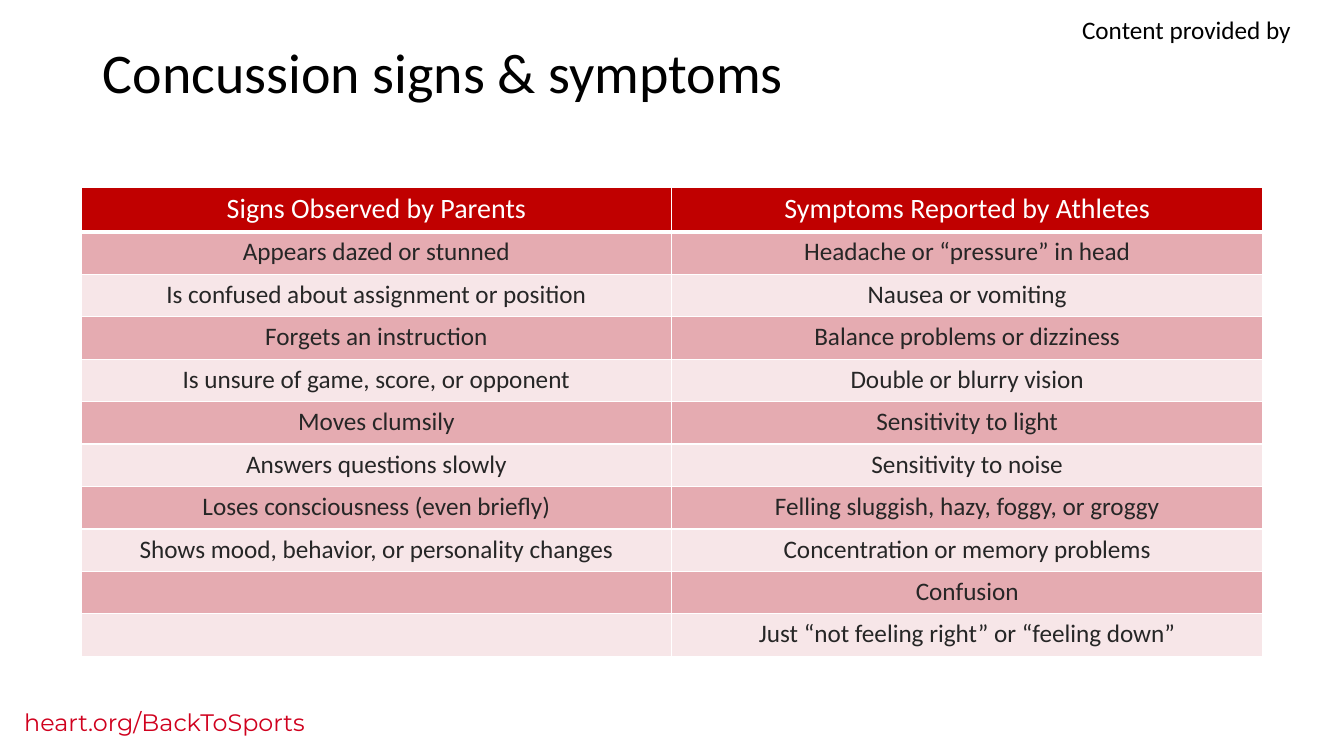
from dataclasses import dataclass

from lxml import etree
from pptx import Presentation
from pptx.dml.color import RGBColor
from pptx.enum.text import MSO_ANCHOR, MSO_AUTO_SIZE, PP_ALIGN
from pptx.oxml.ns import qn
from pptx.util import Cm, Pt

LEFT, CENTER = PP_ALIGN.LEFT, PP_ALIGN.CENTER
TOP, GROW, FIXED = MSO_ANCHOR.TOP, MSO_AUTO_SIZE.SHAPE_TO_FIT_TEXT, MSO_AUTO_SIZE.NONE

SIGNS = [
    "Appears dazed or stunned",
    "Is confused about assignment or position",
    "Forgets an instruction",
    "Is unsure of game, score, or opponent",
    "Moves clumsily",
    "Answers questions slowly",
    "Loses consciousness (even briefly)",
    "Shows mood, behavior, or personality changes",
    "",
    "",
]
SYMPTOMS = [
    "Headache or “pressure” in head",
    "Nausea or vomiting",
    "Balance problems or dizziness",
    "Double or blurry vision",
    "Sensitivity to light",
    "Sensitivity to noise",
    "Felling sluggish, hazy, foggy, or groggy",
    "Concentration or memory problems",
    "Confusion",
    "Just “not feeling right” or “feeling down”",
]


@dataclass(frozen=True)
class Theme:
    body: str = "Calibri"
    brand: str = "Montserrat"
    black: str = "000000"
    white: str = "FFFFFF"
    ink: str = "262626"
    link: str = "D0011E"
    head: str = "C00000"
    band: str = "B61021"
    shades: tuple = (35, 10)  # opacity of alternate rows, percent
    title_size: int = 40
    head_size: int = 20
    text_size: int = 18
    link_size: int = 17


class Page:
    def __init__(self, slide, theme):
        self.slide, self.theme = slide, theme

    def put(self, frame, text, size, color, face=None, align=LEFT):
        para = frame.paragraphs[0]
        para.alignment = align
        if text:
            run = para.add_run()
            run.text = text
            run.font.color.rgb = RGBColor.from_string(color)
            form = {"name": face or self.theme.body, "size": Pt(size), "bold": False}
            for key, value in form.items():
                setattr(run.font, key, value)
        return para

    def title(self, text, box):
        shape = self.slide.shapes.title
        for key, value in zip(("left", "top", "width", "height"), box):
            setattr(shape, key, Cm(value))
        frame = shape.text_frame
        for key, value in {"vertical_anchor": TOP, "auto_size": FIXED, "word_wrap": True}.items():
            setattr(frame, key, value)
        para = self.put(frame, text, self.theme.title_size, self.theme.black)
        para.line_spacing = 0.9

    def label(self, text, box, *style):
        frame = self.slide.shapes.add_textbox(*map(Cm, box)).text_frame
        frame.word_wrap = True
        frame.auto_size = GROW
        self.put(frame, text, *style)

    def paint(self, cell, color, alpha=None, base=1):
        cell.fill.solid()
        cell.fill.fore_color.rgb = RGBColor.from_string(color)
        props = cell._tc.get_or_add_tcPr()
        if alpha:
            tone = props.find(".//" + qn("a:srgbClr"))
            etree.SubElement(tone, qn("a:alpha"), val=str(alpha * 1000))
        # Borders come before the fill
        for i, side in enumerate("LRTB"):
            width = Pt(base if side == "B" else 1)
            line = etree.Element(qn("a:ln" + side), w=str(width))
            fill = etree.SubElement(line, qn("a:solidFill"))
            etree.SubElement(fill, qn("a:srgbClr"), val=self.theme.white)
            props.insert(i, line)

    def table(self, heads, rows, box, tall, low):
        look = self.theme
        grid = self.slide.shapes.add_table(len(rows) + 1, len(heads), *map(Cm, box)).table
        for i, texts in enumerate([heads, *rows]):
            grid.rows[i].height = Cm(low if i else tall)
            for j, text in enumerate(texts):
                cell = grid.cell(i, j)
                if i:
                    self.paint(cell, look.band, look.shades[(i - 1) % 2])
                    style = look.text_size, look.ink
                else:
                    self.paint(cell, look.head, base=3)
                    style = look.head_size, look.white
                self.put(cell.text_frame, text, *style, align=CENTER)


def main():
    deck = Presentation()
    deck.slide_width, deck.slide_height = Cm(33.87), Cm(19.05)
    look = Theme()
    page = Page(deck.slides.add_slide(deck.slide_layouts[5]), look)

    # Footer link and credit line
    page.label("heart.org/BackToSports", (0.36, 17.7, 11, 0.99),
               look.link_size, look.link, look.brand)
    page.label("Content provided by", (26.37, 0.23, 7.06, 1.02),
               look.text_size, look.black, look.body, CENTER)

    # Heading
    page.title("Concussion signs & symptoms", (2.34, 1.02, 24.03, 2.11))

    # Signs beside symptoms
    page.table(("Signs Observed by Parents", "Symptoms Reported by Athletes"),
               list(zip(SIGNS, SYMPTOMS)), (2.04, 4.71, 29.78, 11.83), 1.13, 1.07)

    deck.save("out.pptx")


if __name__ == "__main__":
    main()
